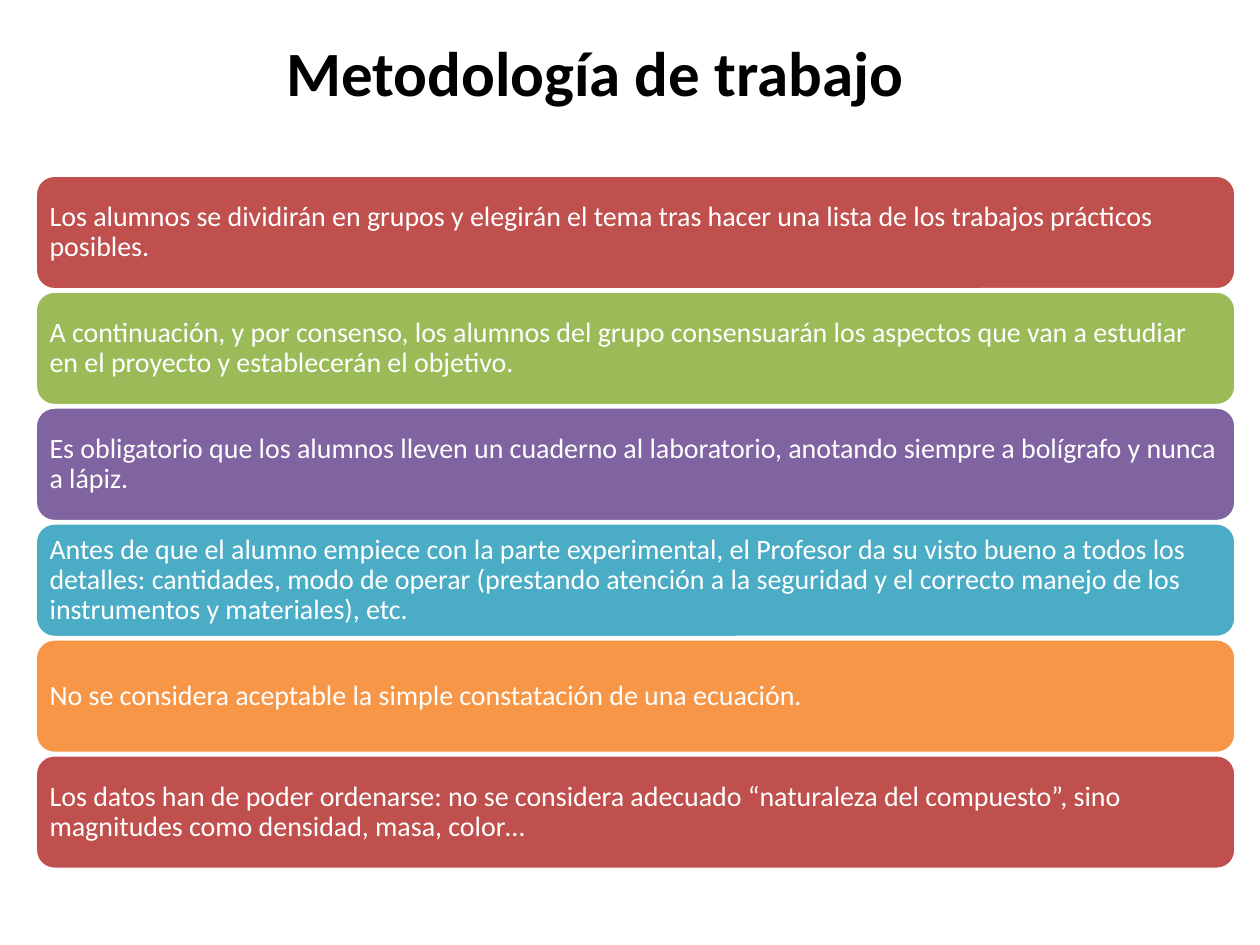
from pptx import Presentation
from pptx.dml.color import RGBColor
from pptx.enum.shapes import MSO_SHAPE
from pptx.enum.text import MSO_ANCHOR, PP_ALIGN
from pptx.util import Inches, Pt

WHITE = RGBColor(0xFF, 0xFF, 0xFF)
BLACK = RGBColor(0x00, 0x00, 0x00)
RED = RGBColor(0xC0, 0x50, 0x4D)
GREEN = RGBColor(0x9B, 0xBB, 0x59)
PURPLE = RGBColor(0x80, 0x64, 0xA2)
TEAL = RGBColor(0x4B, 0xAC, 0xC6)
ORANGE = RGBColor(0xF7, 0x96, 0x46)

FONT = "Calibri"
TITLE = "Metodología de trabajo"
RULES = [
    (RED, "Los alumnos se dividirán en grupos y elegirán el tema tras hacer una lista "
          "de los trabajos prácticos posibles."),
    (GREEN, "A continuación, y por consenso, los alumnos del grupo consensuarán los aspectos "
            "que van a estudiar en el proyecto y establecerán el objetivo."),
    (PURPLE, "Es obligatorio que los alumnos lleven un cuaderno al laboratorio, anotando "
             "siempre a bolígrafo y nunca a lápiz."),
    (TEAL, "Antes de que el alumno empiece con la parte experimental, el Profesor da su visto "
           "bueno a todos los detalles: cantidades, modo de operar (prestando atención a la "
           "seguridad y el correcto manejo de los instrumentos y materiales), etc."),
    (ORANGE, "No se considera aceptable la simple constatación de una ecuación."),
    (RED, "Los datos han de poder ordenarse: no se considera adecuado “naturaleza del "
          "compuesto”, sino magnitudes como densidad, masa, color…"),
]

LEFT, TOP, WIDTH, HEIGHT = 0.28, 1.39, 9.53, 0.91
PITCH = 0.92
PAD = Inches(0.07)


def write(frame, text, size, color, bold=False):
    frame.vertical_anchor = MSO_ANCHOR.MIDDLE
    para = frame.paragraphs[0]
    para.alignment = PP_ALIGN.LEFT
    run = para.add_run()
    run.text = text
    font = run.font
    font.name, font.size, font.bold = FONT, Pt(size), bold
    font.color.rgb = color
    return para


def add_bar(slide, row, fill, text):
    bar = slide.shapes.add_shape(
        MSO_SHAPE.ROUNDED_RECTANGLE,
        Inches(LEFT), Inches(TOP + row * PITCH), Inches(WIDTH), Inches(HEIGHT))
    bar.shadow.inherit = False
    bar.fill.solid()
    bar.fill.fore_color.rgb = fill
    bar.line.color.rgb = WHITE
    bar.line.width = Pt(2)
    frame = bar.text_frame
    frame.word_wrap = True
    frame.margin_left = frame.margin_right = PAD
    frame.margin_top = frame.margin_bottom = PAD
    write(frame, text, 16, WHITE).line_spacing = 0.9


def main():
    deck = Presentation()
    deck.slide_width, deck.slide_height = Inches(10), Inches(7.5)
    slide = deck.slides.add_slide(deck.slide_layouts[5])

    for row, (fill, text) in enumerate(RULES):
        add_bar(slide, row, fill, text)

    title = slide.shapes.title
    title.left, title.top = Inches(2.17), Inches(0.21)
    title.width, title.height = Inches(5.16), Inches(0.71)
    title.text_frame.word_wrap = False
    write(title.text_frame, TITLE, 36, BLACK, True)

    deck.save("out.pptx")


if __name__ == "__main__":
    main()
